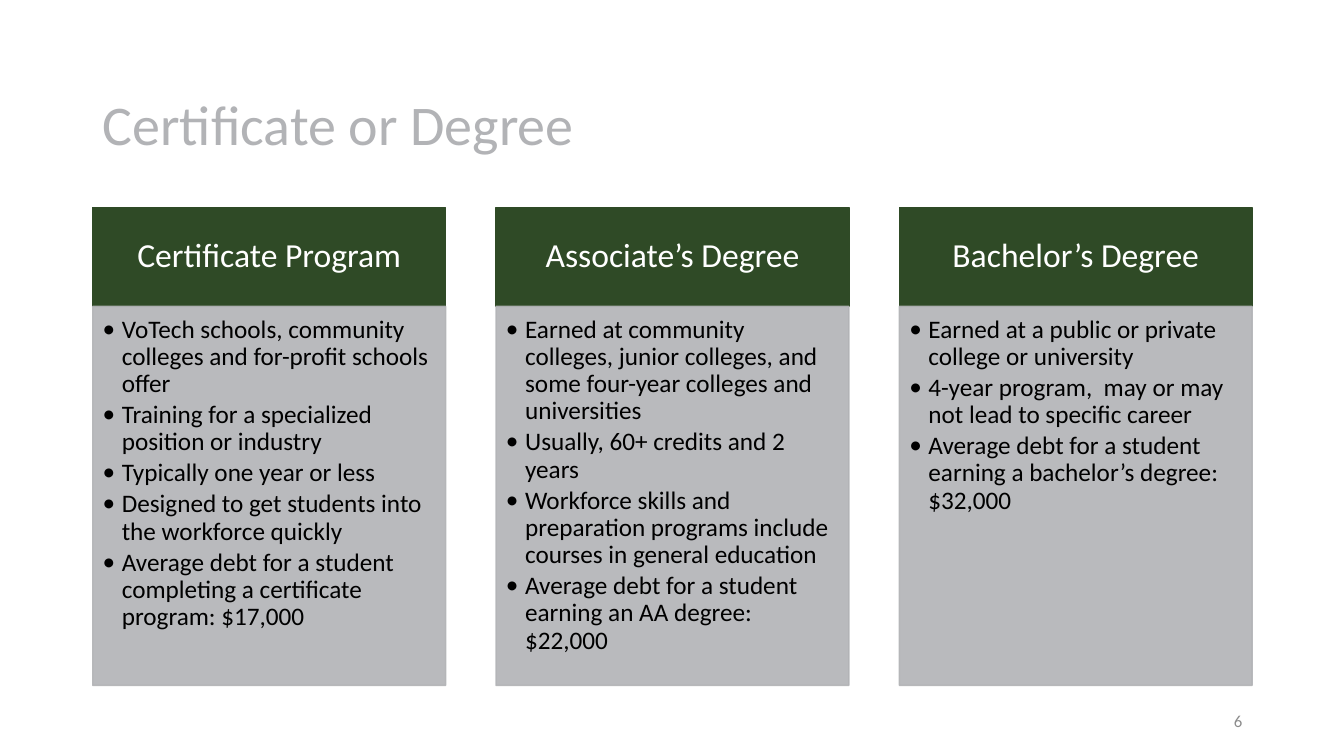
from pptx import Presentation
from pptx.dml.color import RGBColor
from pptx.enum.shapes import MSO_SHAPE
from pptx.enum.text import MSO_ANCHOR, MSO_AUTO_SIZE, PP_ALIGN
from pptx.oxml.ns import qn
from pptx.util import Inches, Pt
from lxml import etree

RECTANGLE = MSO_SHAPE.RECTANGLE
TOP, MIDDLE = MSO_ANCHOR.TOP, MSO_ANCHOR.MIDDLE
LEFT, CENTER, RIGHT = PP_ALIGN.LEFT, PP_ALIGN.CENTER, PP_ALIGN.RIGHT
NO_AUTOFIT = MSO_AUTO_SIZE.NONE
TITLE_ONLY = 5

PROGRAMS = [
    ("Certificate Program", [
        "VoTech schools, community colleges and for-profit schools offer",
        "Training for a specialized position or industry",
        "Typically one year or less",
        "Designed to get students into the workforce quickly",
        "Average debt for a student completing a certificate program: $17,000",
    ]),
    ("Associate’s Degree", [
        "Earned at community colleges, junior colleges, and some four-year colleges and universities",
        "Usually, 60+ credits and 2 years",
        "Workforce skills and preparation programs include courses in general education",
        "Average debt for a student earning an AA degree: $22,000",
    ]),
    ("Bachelor’s Degree", [
        "Earned at a public or private college or university",
        "4-year program,  may or may not lead to specific career",
        "Average debt for a student earning a bachelor’s degree: $32,000",
    ]),
]


def color(value):
    return RGBColor.from_string(value)


class ProgramSlide:
    font = "Calibri"
    green, gray, white, black, number_gray = "2F4A26", "B2B3B6", "FFFFFF", "000000", "8C8C8C"
    margin, column_pitch, column_width = 0.92, 4, 3.5
    rows = {"title": (0.79, 0.95), "header": (2.06, 0.98), "body": (3.04, 3.76), "footer": (6.95, 0.4)}

    def __init__(self, presentation):
        self.slide = presentation.slides.add_slide(presentation.slide_layouts[TITLE_ONLY])

    def box(self, row, column=0, span=1):
        top, height = self.rows[row]
        left = self.margin + column * self.column_pitch
        width = self.column_width + (span - 1) * self.column_pitch
        return [Inches(length) for length in (left, top, width, height)]

    def set_text(self, shape, lines, size, text_color, alignment=LEFT, anchor=MIDDLE,
                 insets=(0.1, 0.05, 0.1, 0.05), line_spacing=0.9):
        frame = shape.text_frame
        frame.text = "\n".join(lines)
        frame.word_wrap = True
        frame.auto_size = NO_AUTOFIT
        frame.vertical_anchor = anchor
        (frame.margin_left, frame.margin_top,
         frame.margin_right, frame.margin_bottom) = [Inches(inset) for inset in insets]
        for paragraph in frame.paragraphs:
            paragraph.alignment = alignment
            paragraph.line_spacing = line_spacing
            for run in paragraph.runs:
                run.font.name = self.font
                run.font.size = Pt(size)
                run.font.color.rgb = color(text_color)

    def title(self, text):
        shape = self.slide.shapes.title
        shape.left, shape.top, shape.width, shape.height = self.box("title", span=3)
        self.set_text(shape, [text], 40, self.gray)

    def panel(self, row, column, fill, opacity=100):
        shape = self.slide.shapes.add_shape(RECTANGLE, *self.box(row, column))
        shape.shadow.inherit = False
        shape.fill.solid()
        shape.fill.fore_color.rgb = color(fill)
        shape.line.color.rgb = color(fill)
        shape.line.width = Pt(1)
        if opacity < 100:
            for node in shape.element.spPr.iter(qn("a:srgbClr")):
                etree.SubElement(node, qn("a:alpha")).set("val", str(opacity * 1000))
        return shape

    def header(self, column, text):
        shape = self.panel("header", column, self.green)
        self.set_text(shape, [text], 24, self.white, CENTER, insets=(0.19, 0.11, 0.19, 0.11))

    def bullets(self, column, lines):
        shape = self.panel("body", column, self.gray, opacity=90)
        self.set_text(shape, lines, 18, self.black, anchor=TOP, insets=(0.1, 0.1, 0.14, 0.16))
        for paragraph in shape.text_frame.paragraphs:
            paragraph.space_after = Pt(2.7)
            properties = paragraph._p.get_or_add_pPr()
            properties.set("marL", str(Inches(0.19)))
            properties.set("indent", str(Inches(-0.19)))
            etree.SubElement(properties, qn("a:buFont")).set("typeface", self.font)
            etree.SubElement(properties, qn("a:buChar")).set("char", "•")

    def page_number(self, number):
        shape = self.slide.shapes.add_textbox(*self.box("footer", column=2))
        self.set_text(shape, [str(number)], 12, self.number_gray, RIGHT, line_spacing=1.0)


def main():
    presentation = Presentation()
    presentation.slide_width = Inches(13.33)
    presentation.slide_height = Inches(7.5)
    slide = ProgramSlide(presentation)
    slide.title("Certificate or Degree")
    for column, (name, facts) in enumerate(PROGRAMS):
        slide.header(column, name)
        slide.bullets(column, facts)
    slide.page_number(6)
    presentation.save("out.pptx")


if __name__ == "__main__":
    main()
